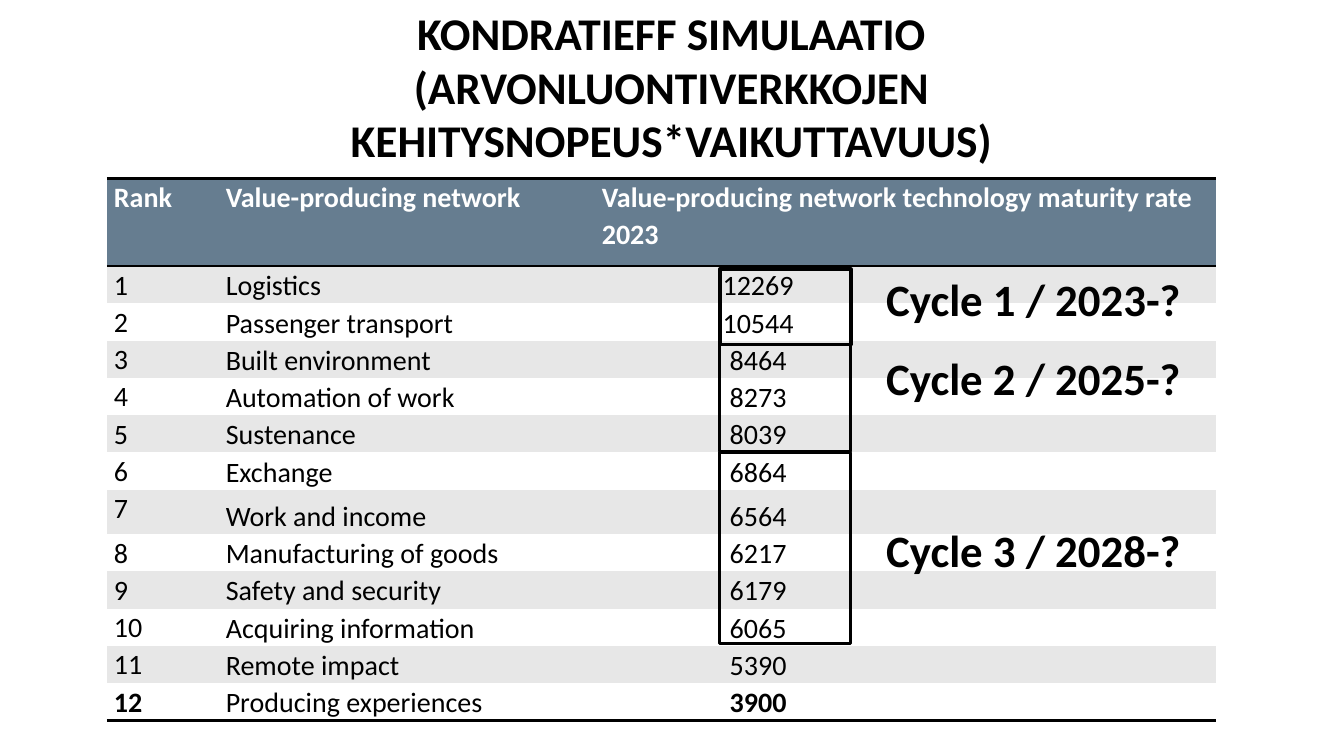
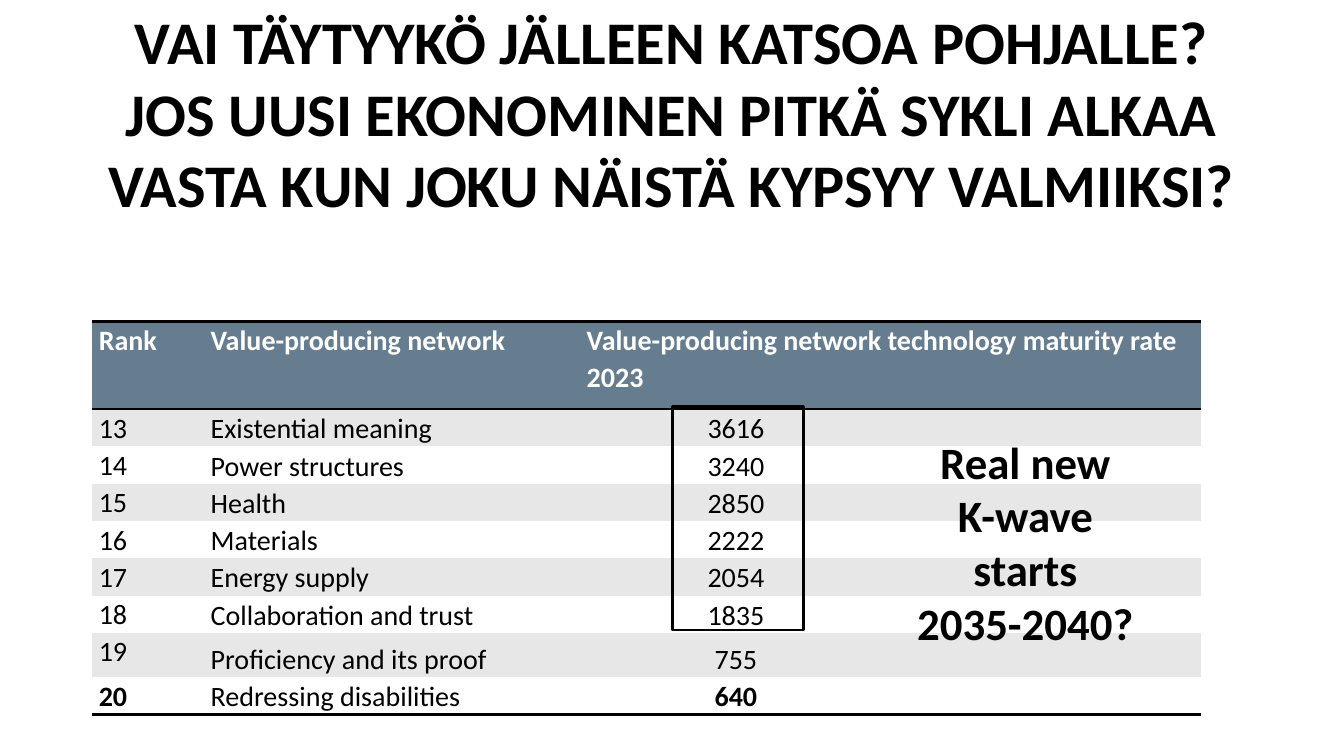
from lxml import etree
from pptx import Presentation
from pptx.dml.color import RGBColor
from pptx.enum.shapes import MSO_SHAPE
from pptx.enum.text import MSO_ANCHOR, PP_ALIGN
from pptx.oxml.ns import qn
from pptx.util import Inches, Pt

RECTANGLE = MSO_SHAPE.RECTANGLE
TOP, BOTTOM = MSO_ANCHOR.TOP, MSO_ANCHOR.BOTTOM
LEFT, CENTER = PP_ALIGN.LEFT, PP_ALIGN.CENTER

# Shared look
FONT = "Calibri"
BLACK, WHITE, SLATE, BAND = "000000", "FFFFFF", "667D90", "E7E7E7"
PLAIN_STYLE = "{2D5ABB26-0587-4C30-8999-92F81FD0307C}"
TITLE_LEFT, TITLE_WIDTH = 0.91, 11.5
HEADERS = ["Rank", "Value-producing network",
           "Value-producing network technology maturity rate 2023"]
COLUMN_WIDTHS = [1.11, 3.73, 6.16]
HEADER_HEIGHT, ROW_HEIGHT, TALL_ROW_HEIGHT = 0.87, 0.37, 0.44
TALL_ROW = 7
CELL_INSET = 0.07
BOX_WIDTH, NOTE_WIDTH = 1.3, 3.62

# Content
LEADING_NETWORKS = [
    ("Logistics", 12269), ("Passenger transport", 10544),
    ("Built environment", 8464), ("Automation of work", 8273),
    ("Sustenance", 8039), ("Exchange", 6864), ("Work and income", 6564),
    ("Manufacturing of goods", 6217), ("Safety and security", 6179),
    ("Acquiring information", 6065), ("Remote impact", 5390),
    ("Producing experiences", 3900),
]
TRAILING_NETWORKS = [
    ("Existential meaning", 3616), ("Power structures", 3240),
    ("Health", 2850), ("Materials", 2222), ("Energy supply", 2054),
    ("Collaboration and trust", 1835), ("Proficiency and its proof", 755),
    ("Redressing disabilities", 640),
]
# Cycle label, label top, box top, box height, box line width
CYCLES = [
    ("Cycle 2 / 2025-?", 3.43, 3.42, 1.06, 2),
    ("Cycle 3 / 2028-?", 5.14, 4.49, 1.89, 2),
    ("Cycle 1 / 2023-?", 2.65, 2.67, 0.75, 2.5),
]


def rgb(color):
    return RGBColor.from_string(color)


def apply(target, values):
    for name, value in values.items():
        setattr(target, name, value)


def format_paragraph(paragraph, size, color, bold, align, spacing):
    apply(paragraph, {"alignment": align, "line_spacing": spacing})
    apply(paragraph.font, {"name": FONT, "size": Pt(size), "bold": bold})
    paragraph.font.color.rgb = rgb(color)


def solid_line(parent, tag, position, color, width):
    line = etree.Element(qn(tag), w=str(Pt(width)))
    fill = etree.SubElement(line, qn("a:solidFill"))
    etree.SubElement(fill, qn("a:srgbClr"), val=color)
    parent.insert(position, line)


def add_lines(slide, lines, left, top, width, height, size, insets, spacing):
    """Add a box of bold, centred lines and return its paragraphs."""
    frame = slide.shapes.add_textbox(
        Inches(left), Inches(top), Inches(width), Inches(height)).text_frame
    side, upper = insets
    apply(frame, {"word_wrap": True, "vertical_anchor": TOP,
                  "margin_left": Inches(side), "margin_right": Inches(side),
                  "margin_top": Inches(upper), "margin_bottom": 0})
    frame.text = "\n".join(lines)
    for paragraph in frame.paragraphs:
        format_paragraph(paragraph, size, BLACK, True, CENTER, spacing)
    return frame.paragraphs


def add_title(slide, lines, height, size):
    add_lines(slide, lines, TITLE_LEFT, 0, TITLE_WIDTH, height, size,
              (0, 0.08), 0.98)


def add_note(slide, lines, left, top, height):
    """Add a cycle note with white-outlined letters."""
    for paragraph in add_lines(slide, lines, left, top, NOTE_WIDTH, height,
                               32, (0.1, 0.05), 1.0):
        run = paragraph.runs[0]
        solid_line(run.font._element, "a:ln", 0, WHITE, 0.75)


def add_cycle_box(slide, left, top, height, line_width):
    box = slide.shapes.add_shape(RECTANGLE, Inches(left), Inches(top),
                                 Inches(BOX_WIDTH), Inches(height))
    box.shadow.inherit = False
    box.fill.background()
    box.line.color.rgb = rgb(BLACK)
    box.line.width = Pt(line_width)


def fill_cell(cell, text, fill, color, bold, anchor, align, right, borders):
    apply(cell, {"text": text, "vertical_anchor": anchor,
                 "margin_left": Inches(CELL_INSET),
                 "margin_right": Inches(right),
                 "margin_top": 0, "margin_bottom": 0})
    cell.fill.solid()
    cell.fill.fore_color.rgb = rgb(fill)
    format_paragraph(cell.text_frame.paragraphs[0], 20, color, bold, align, 1.07)
    for position, tag in enumerate(borders):
        solid_line(cell._tc.get_or_add_tcPr(), tag, position, BLACK, 2)


def add_ranking(slide, networks, first_rank, left, top, value_center):
    """Add the ranking; values are centred value_center into their column."""
    last = len(networks)
    heights = [HEADER_HEIGHT] + [
        TALL_ROW_HEIGHT if row == TALL_ROW else ROW_HEIGHT
        for row in range(1, last + 1)]
    table = slide.shapes.add_table(
        last + 1, len(HEADERS), Inches(left), Inches(top),
        Inches(sum(COLUMN_WIDTHS)), Inches(sum(heights))).table
    apply(table, {"first_row": False, "horz_banding": False})
    table._tbl.tblPr.find(qn("a:tableStyleId")).text = PLAIN_STYLE
    for column, width in zip(table.columns, COLUMN_WIDTHS):
        column.width = Inches(width)
    for row, height in zip(table.rows, heights):
        row.height = Inches(height)

    # Header row
    for column, header in enumerate(HEADERS):
        fill_cell(table.cell(0, column), header, SLATE, WHITE, True, TOP, LEFT,
                  CELL_INSET, ["a:lnT", "a:lnB"])

    # Ranked rows
    value_inset = COLUMN_WIDTHS[2] - 2 * value_center + CELL_INSET
    for row, (network, value) in enumerate(networks, 1):
        fill = BAND if row % 2 else WHITE
        borders = ["a:lnB"] if row == last else []
        cells = [
            (str(first_rank + row - 1), row == last, TOP, LEFT, CELL_INSET),
            (network, False, BOTTOM, LEFT, CELL_INSET),
            (str(value), row == last, BOTTOM, CENTER, value_inset),
        ]
        for column, (text, bold, anchor, align, right) in enumerate(cells):
            fill_cell(table.cell(row, column), text, fill, BLACK, bold, anchor,
                      align, right, borders)


def build_simulation(slide):
    add_title(slide, ["KONDRATIEFF SIMULAATIO",
                      "(ARVONLUONTIVERKKOJEN KEHITYSNOPEUS*VAIKUTTAVUUS)"],
              1.77, 32.4)
    add_ranking(slide, LEADING_NETWORKS, 1, 1.06, 1.77, 1.62)
    for label, label_top, box_top, box_height, line_width in CYCLES:
        add_cycle_box(slide, 7.14, box_top, box_height, line_width)
        add_note(slide, [label], 8.44, label_top, 0.64)


def build_late_wave(slide):
    add_title(slide, ["VAI TÄYTYYKÖ JÄLLEEN KATSOA POHJALLE? JOS UUSI "
                      "EKONOMINEN PITKÄ SYKLI ALKAA VASTA KUN JOKU NÄISTÄ "
                      "KYPSYY VALMIIKSI?"], 2.96, 43.2)
    add_ranking(slide, TRAILING_NETWORKS, 13, 0.91, 3.19, 1.55)
    add_cycle_box(slide, 6.67, 4.03, 2.22, 2)
    add_note(slide, ["Real new", "K-wave", "starts", "2035-2040?"],
             8.36, 4.26, 2.26)


def main():
    deck = Presentation()
    deck.slide_width, deck.slide_height = Inches(13.33), Inches(7.5)
    blank = deck.slide_layouts[6]
    for build in (build_simulation, build_late_wave):
        build(deck.slides.add_slide(blank))
    deck.save("out.pptx")


if __name__ == "__main__":
    main()
